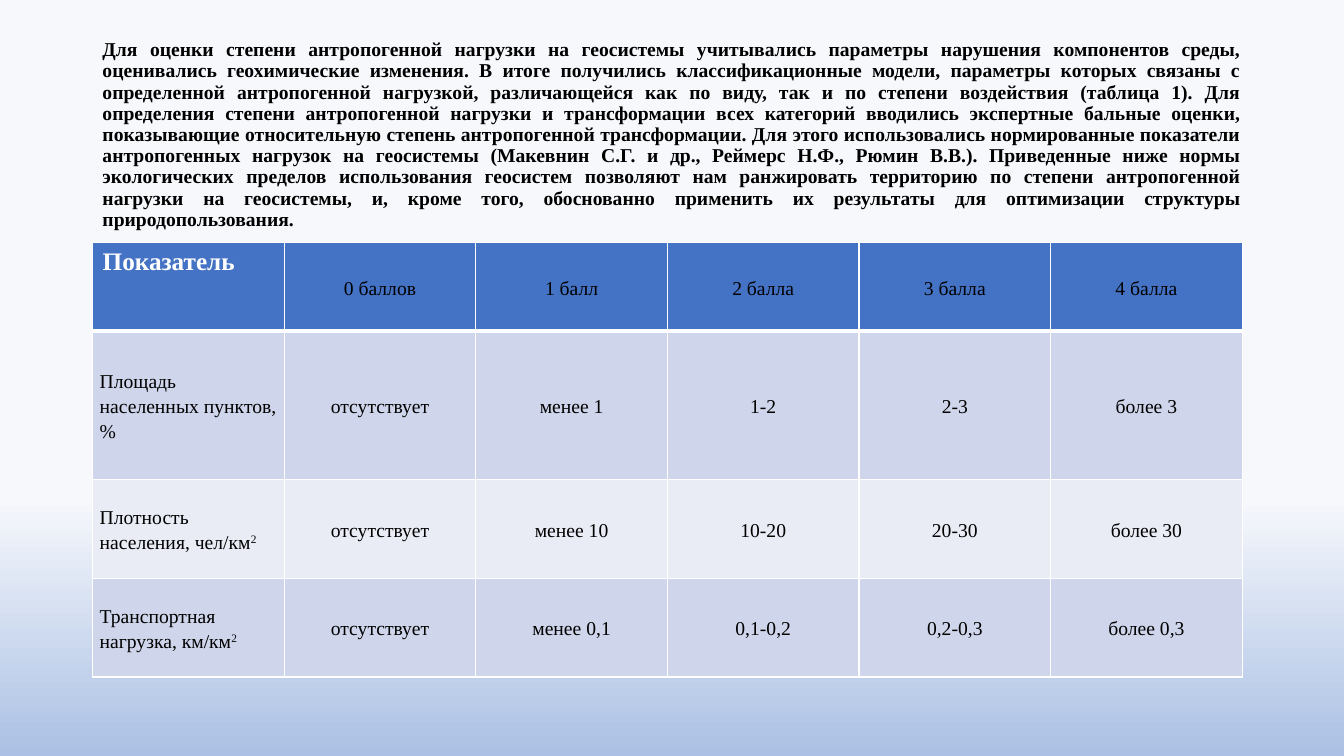
from collections import namedtuple
from dataclasses import dataclass

from lxml import etree
from pptx import Presentation
from pptx.dml.color import RGBColor
from pptx.enum.text import MSO_ANCHOR, MSO_AUTO_SIZE, PP_ALIGN
from pptx.oxml.ns import qn
from pptx.util import Pt

MID, TOP = MSO_ANCHOR.MIDDLE, MSO_ANCHOR.TOP
LEFT, CENTER, FULL = PP_ALIGN.LEFT, PP_ALIGN.CENTER, PP_ALIGN.JUSTIFY
FIT_NONE = MSO_AUTO_SIZE.NONE
Box = namedtuple("Box", "x y w h")


@dataclass(frozen=True)
class Theme:
    font: str = "Times New Roman"
    ink: str = "000000"
    white: str = "FFFFFF"
    head: str = "4472C4"
    bands: tuple = ("CFD5EA", "E9EBF5")
    sky: tuple = ((0.66, "F6F8FC"), (1, "ABC0E4"))
    body: int = 14
    label: int = 18
    thin: int = 1
    thick: int = 3


THEME = Theme()

INTRO = (
    "Для оценки степени антропогенной нагрузки на геосистемы учитывались параметры "
    "нарушения компонентов среды, оценивались геохимические изменения.",
    "В итоге получились классификационные модели, параметры которых связаны с "
    "определенной антропогенной нагрузкой, различающейся как по виду, так и по степени "
    "воздействия (таблица 1).",
    "Для определения степени антропогенной нагрузки и трансформации всех категорий "
    "вводились экспертные бальные оценки, показывающие относительную степень "
    "антропогенной трансформации.",
    "Для этого использовались нормированные показатели антропогенных нагрузок на "
    "геосистемы (Макевнин С.Г. и др., Реймерс Н.Ф., Рюмин В.В.).",
    "Приведенные ниже нормы экологических пределов использования геосистем позволяют "
    "нам ранжировать территорию по степени антропогенной нагрузки на геосистемы, и, "
    "кроме того, обоснованно применить их результаты для оптимизации структуры "
    "природопользования.",
)
ROWS = (
    ("Показатель", "0 баллов", "1 балл", "2 балла", "3 балла", "4 балла"),
    ("Площадь населенных пунктов, %", "отсутствует", "менее 1", "1-2", "2-3", "более 3"),
    ("Плотность населения, чел/км^2", "отсутствует", "менее 10", "10-20", "20-30", "более 30"),
    ("Транспортная нагрузка, км/км^2", "отсутствует", "менее 0,1", "0,1-0,2", "0,2-0,3", "более 0,3"),
)
SHARES = (0.88, 1.47, 0.98, 0.98)


def write(frame, text, size=THEME.body, color=THEME.ink, bold=False, align=LEFT, space=1.0):
    frame.word_wrap = True
    para = frame.paragraphs[0]
    para.alignment, para.line_spacing = align, space
    base, _, power = text.partition("^")
    for part, lift in ((base, 0), (power, 30000)):
        if part:
            run = para.add_run()
            run.text = part
            font = run.font
            font.name, font.size, font.bold = THEME.font, Pt(size), bold
            font.color.rgb = RGBColor.from_string(color)
            if lift:
                run._r.get_or_add_rPr().set("baseline", str(lift))


def edge(cell, widths):
    props = cell._tc.get_or_add_tcPr()
    for spot, (side, width) in enumerate(zip("LRTB", widths)):
        line = etree.Element(qn(f"a:ln{side}"), w=str(Pt(width)))
        fill = etree.SubElement(line, qn("a:solidFill"))
        etree.SubElement(fill, qn("a:srgbClr"), val=THEME.white)
        props.insert(spot, line)


def paint(slide):
    fill = slide.background.fill
    fill.gradient()
    fill.gradient_angle = 270
    for stop, (place, color) in zip(fill.gradient_stops, THEME.sky):
        stop.position = place
        stop.color.rgb = RGBColor.from_string(color)


def add_intro(slide, box):
    title = slide.shapes.title
    title.left, title.top, title.width, title.height = map(Pt, box)
    frame = title.text_frame
    frame.auto_size, frame.vertical_anchor = FIT_NONE, MID
    write(frame, " ".join(INTRO), bold=True, align=FULL, space=0.9)


def add_scores(slide, box):
    count = len(ROWS[0])
    table = slide.shapes.add_table(len(ROWS), count, *map(Pt, box)).table
    table.first_row = table.horz_banding = False
    for col in table.columns:
        col.width = Pt(box.w / count)
    for r, (texts, share) in enumerate(zip(ROWS, SHARES)):
        table.rows[r].height = Pt(box.h * share / sum(SHARES))
        shade = THEME.bands[(r - 1) % 2] if r else THEME.head
        above = THEME.thick if r == 1 else THEME.thin
        below = THEME.thin if r else THEME.thick
        for c, text in enumerate(texts):
            cell = table.cell(r, c)
            cell.fill.solid()
            cell.fill.fore_color.rgb = RGBColor.from_string(shade)
            edge(cell, (THEME.thin, THEME.thin, above, below))
            if r == c == 0:
                cell.vertical_anchor = TOP
                write(cell.text_frame, text, size=THEME.label, color=THEME.white, bold=True)
                continue
            cell.vertical_anchor = MID
            cell.margin_left = cell.margin_right = Pt(5)
            cell.margin_top = cell.margin_bottom = Pt(0)
            write(cell.text_frame, text, align=CENTER if c else LEFT, space=1.15)


def main():
    deck = Presentation()
    deck.slide_width, deck.slide_height = Pt(960), Pt(540)
    slide = deck.slides.add_slide(deck.slide_layouts[5])
    paint(slide)
    add_intro(slide, Box(66, 38, 828, 117))
    add_scores(slide, Box(66.2, 173.3, 821.2, 310.4))
    deck.save("out.pptx")


if __name__ == "__main__":
    main()
